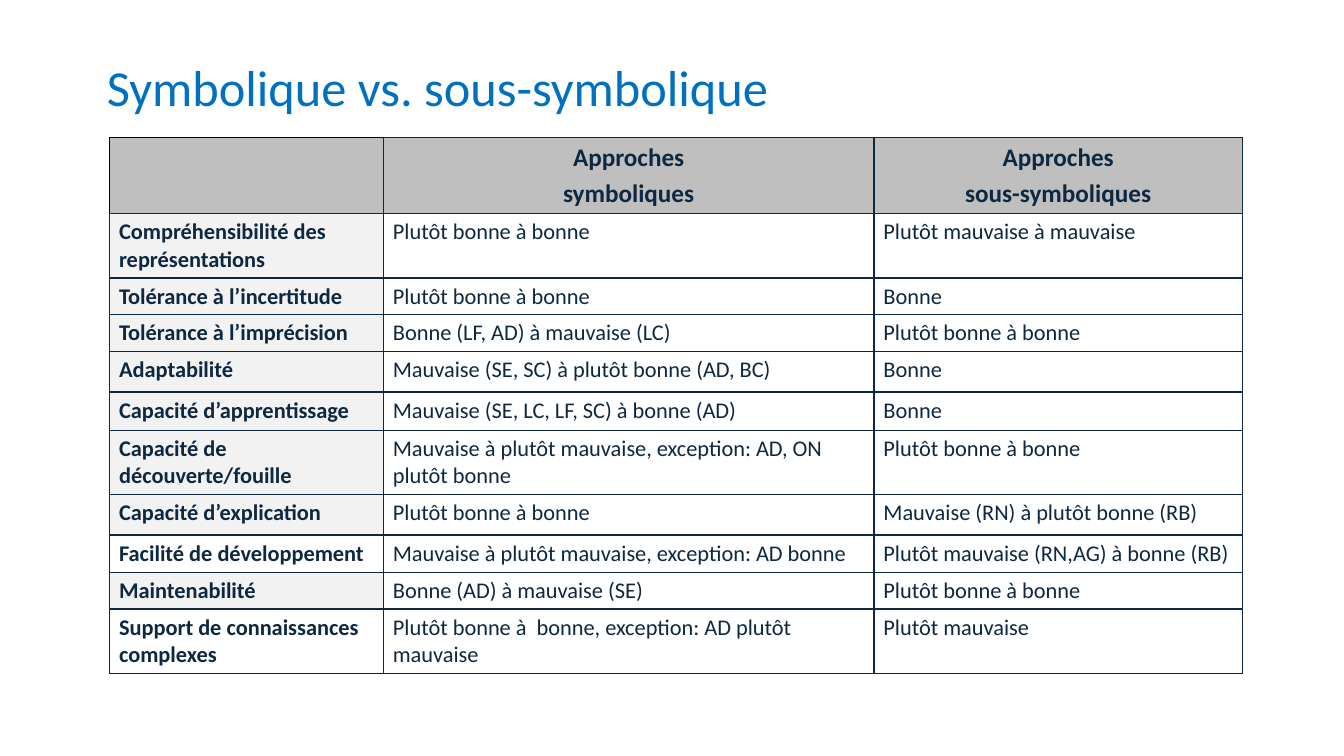
from lxml import etree
from pptx import Presentation
from pptx.dml.color import RGBColor
from pptx.enum.text import MSO_ANCHOR, PP_ALIGN
from pptx.oxml.ns import qn
from pptx.util import Pt

CENTER, LEFT = PP_ALIGN.CENTER, PP_ALIGN.LEFT
MIDDLE = MSO_ANCHOR.MIDDLE

BLUE = RGBColor(0x00, 0x70, 0xC0)
NAVY = RGBColor(0x0E, 0x28, 0x41)
BLACK = RGBColor(0x00, 0x00, 0x00)
HEADER_GREY = RGBColor(0xBF, 0xBF, 0xBF)
LABEL_GREY = RGBColor(0xF2, 0xF2, 0xF2)

TITLE_ONLY = 5
COLUMN_WIDTHS = (195.6, 350.4, 263.2)
ROW_HEIGHTS = (49.7, 41, 23.8, 23.8, 28.8, 27.4, 28.8, 28.8, 26.6, 23, 38.2)
UNSHADED_LABELS = ("Facilité de développement", "Support de connaissances complexes")
ROWS = (
    ("", "Approches\nsymboliques", "Approches\nsous-symboliques"),
    ("Compréhensibilité des représentations", "Plutôt bonne à bonne",
     "Plutôt mauvaise à mauvaise"),
    ("Tolérance à l’incertitude", "Plutôt bonne à bonne", "Bonne"),
    ("Tolérance à l’imprécision", "Bonne (LF, AD) à mauvaise (LC)",
     "Plutôt bonne à bonne"),
    ("Adaptabilité", "Mauvaise (SE, SC) à plutôt bonne (AD, BC)", "Bonne"),
    ("Capacité d’apprentissage", "Mauvaise (SE, LC, LF, SC) à bonne (AD)", "Bonne"),
    ("Capacité de découverte/fouille",
     "Mauvaise à plutôt mauvaise, exception: AD, ON plutôt bonne",
     "Plutôt bonne à bonne"),
    ("Capacité d’explication", "Plutôt bonne à bonne",
     "Mauvaise (RN) à plutôt bonne (RB)"),
    ("Facilité de développement", "Mauvaise à plutôt mauvaise, exception: AD bonne",
     "Plutôt mauvaise (RN,AG) à bonne (RB)"),
    ("Maintenabilité", "Bonne (AD) à mauvaise (SE)", "Plutôt bonne à bonne"),
    ("Support de connaissances complexes",
     "Plutôt bonne à  bonne, exception: AD plutôt mauvaise", "Plutôt mauvaise"),
)


def style_paragraph(para, size, color, bold=False, align=LEFT):
    para.alignment = align
    para.font.name = "Calibri"
    para.font.size = Pt(size)
    para.font.bold = bold
    para.font.color.rgb = color


def set_borders(cell, colors):
    """Draw 1 pt borders; colors maps each side (L, R, T, B) to a colour."""
    properties = cell._tc.get_or_add_tcPr()
    for position, (side, color) in enumerate(colors.items()):
        line = etree.Element(qn(f"a:ln{side}"), w=str(Pt(1)))
        fill = etree.SubElement(line, qn("a:solidFill"))
        etree.SubElement(fill, qn("a:srgbClr"), val=str(color))
        properties.insert(position, line)


# Title
def add_title(page, left, top, width, height):
    title = page.shapes.title
    title.left, title.top = Pt(left), Pt(top)
    title.width, title.height = Pt(width), Pt(height)
    frame = title.text_frame
    frame.text = "Symbolique vs. sous-symbolique"
    frame.vertical_anchor = MIDDLE
    style_paragraph(frame.paragraphs[0], 36, BLUE)


# Comparison table
def fill_cell(cell, text, is_header, is_label):
    cell.margin_left = cell.margin_right = Pt(6.8)
    cell.margin_top = cell.margin_bottom = Pt(3.4)
    if text:
        cell.text = text
    for number, para in enumerate(cell.text_frame.paragraphs):
        style_paragraph(para, 18 if is_header else 16, NAVY,
                        bold=is_header or is_label,
                        align=CENTER if is_header else LEFT)
        if number:
            para.space_before = Pt(3.6)
    if is_header or (is_label and text not in UNSHADED_LABELS):
        cell.fill.solid()
        cell.fill.fore_color.rgb = HEADER_GREY if is_header else LABEL_GREY
    else:
        cell.fill.background()
    outer = BLACK if is_header and is_label else NAVY
    set_borders(cell, {"L": outer, "R": NAVY, "T": outer, "B": NAVY})


def add_comparison(page, left, top):
    table = page.shapes.add_table(
        len(ROWS), len(COLUMN_WIDTHS), Pt(left), Pt(top),
        Pt(sum(COLUMN_WIDTHS)), Pt(sum(ROW_HEIGHTS))).table
    table.first_row = table.horz_banding = False
    for column, width in zip(table.columns, COLUMN_WIDTHS):
        column.width = Pt(width)
    for row, height in zip(table.rows, ROW_HEIGHTS):
        row.height = Pt(height)
    for r, texts in enumerate(ROWS):
        for c, text in enumerate(texts):
            fill_cell(table.cell(r, c), text, is_header=r == 0, is_label=c == 0)


def main():
    deck = Presentation()
    deck.slide_width, deck.slide_height = Pt(960), Pt(540)
    page = deck.slides.add_slide(deck.slide_layouts[TITLE_ONLY])
    add_title(page, 69.12, 28.8, 763.2, 66.24)
    add_comparison(page, 78.3, 98.4)
    deck.save("out.pptx")


if __name__ == "__main__":
    main()
